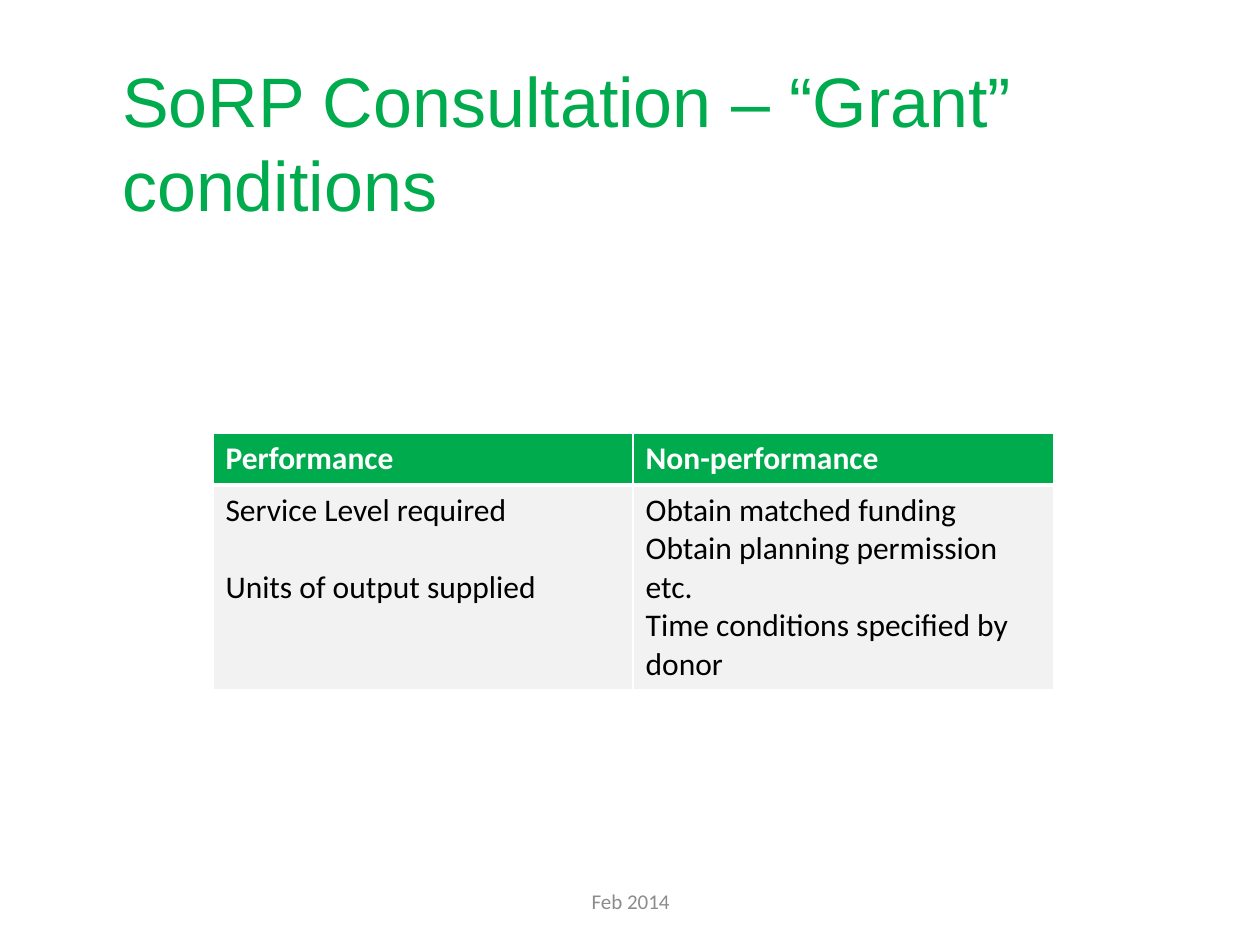
import pptx
import pptx.util
import pptx.dml.color
import pptx.enum.text
import lxml.etree

COLORS = {"green": "00AB4E", "white": "FFFFFF", "black": "000000",
          "pale": "F2F2F2", "grey": "8C8C8C"}
TITLE = "SoRP Consultation – “Grant” conditions"
FOOTER = "Feb 2014"
CONDITIONS = [
    ("Performance", ["Service Level required", "Units of output supplied"], 22),
    ("Non-performance", ["Obtain matched funding", "Obtain planning permission etc.",
                         "Time conditions specified by donor"], 0),
]
ROW_HEIGHTS = (0.41, 1.6)
TABLE_LEFT, TABLE_TOP, TABLE_WIDTH = 1.69, 3.44, 6.67
HEADER_RULE, THIN_RULE = 3, 1


def inches(*lengths):
    return [pptx.util.Inches(length) for length in lengths]


def rgb(name):
    return pptx.dml.color.RGBColor.from_string(COLORS[name])


def style(frame, size, font, color, bold=False):
    for paragraph in frame.paragraphs:
        for run in paragraph.runs:
            run.font.size = pptx.util.Pt(size)
            run.font.name = font
            run.font.bold = bold
            run.font.color.rgb = rgb(color)


def add_borders(cell, top, bottom):
    properties = cell._tc.get_or_add_tcPr()
    for side, width in (("L", THIN_RULE), ("R", THIN_RULE), ("T", top), ("B", bottom)):
        line = lxml.etree.SubElement(properties, pptx.oxml.ns.qn(f"a:ln{side}"),
                                     w=str(pptx.util.Pt(width)))
        fill = lxml.etree.SubElement(line, pptx.oxml.ns.qn("a:solidFill"))
        lxml.etree.SubElement(fill, pptx.oxml.ns.qn("a:srgbClr"), val=COLORS["white"])


def fill_cell(cell, lines, gap, fill, color, bold):
    cell.text_frame.text = "\n".join(lines)
    for paragraph in cell.text_frame.paragraphs[1:]:
        paragraph.space_before = pptx.util.Pt(gap)
    style(cell.text_frame, 18, "Calibri", color, bold)
    cell.fill.solid()
    cell.fill.fore_color.rgb = rgb(fill)


def main():
    deck = pptx.Presentation()
    deck.slide_width, deck.slide_height = inches(10, 7.5)
    slide = deck.slides.add_slide(deck.slide_layouts[5])

    title = slide.shapes.title
    title.left, title.top, title.width, title.height = inches(0.87, 0.31, 9, 1.62)
    title.text_frame.text = TITLE
    title.text_frame.vertical_anchor = pptx.enum.text.MSO_ANCHOR.MIDDLE
    title.text_frame.paragraphs[0].alignment = pptx.enum.text.PP_ALIGN.LEFT
    style(title.text_frame, 40, "Arial", "green")

    table = slide.shapes.add_table(
        len(ROW_HEIGHTS), len(CONDITIONS),
        *inches(TABLE_LEFT, TABLE_TOP, TABLE_WIDTH, sum(ROW_HEIGHTS))).table
    for row, height in zip(table.rows, ROW_HEIGHTS):
        row.height = pptx.util.Inches(height)
    for column, (heading, examples, gap) in enumerate(CONDITIONS):
        header, body = table.cell(0, column), table.cell(1, column)
        add_borders(header, THIN_RULE, HEADER_RULE)
        add_borders(body, HEADER_RULE, THIN_RULE)
        fill_cell(header, [heading], 0, "green", "white", True)
        fill_cell(body, examples, gap, "pale", "black", False)

    footer = slide.shapes.add_textbox(*inches(3.42, 6.95, 3.17, 0.4)).text_frame
    footer.word_wrap = True
    footer.vertical_anchor = pptx.enum.text.MSO_ANCHOR.MIDDLE
    footer.text = FOOTER
    footer.paragraphs[0].alignment = pptx.enum.text.PP_ALIGN.CENTER
    style(footer, 12, "Calibri", "grey")

    deck.save("out.pptx")


if __name__ == "__main__":
    main()
